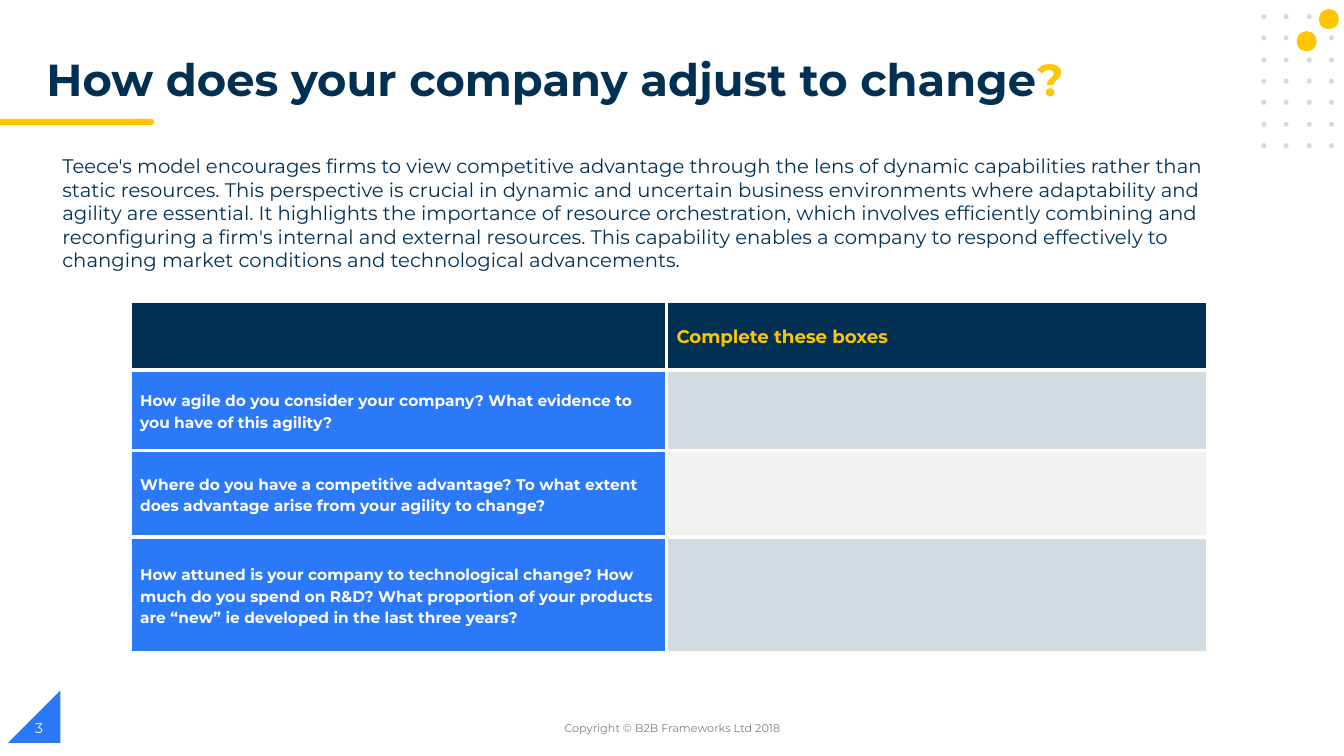
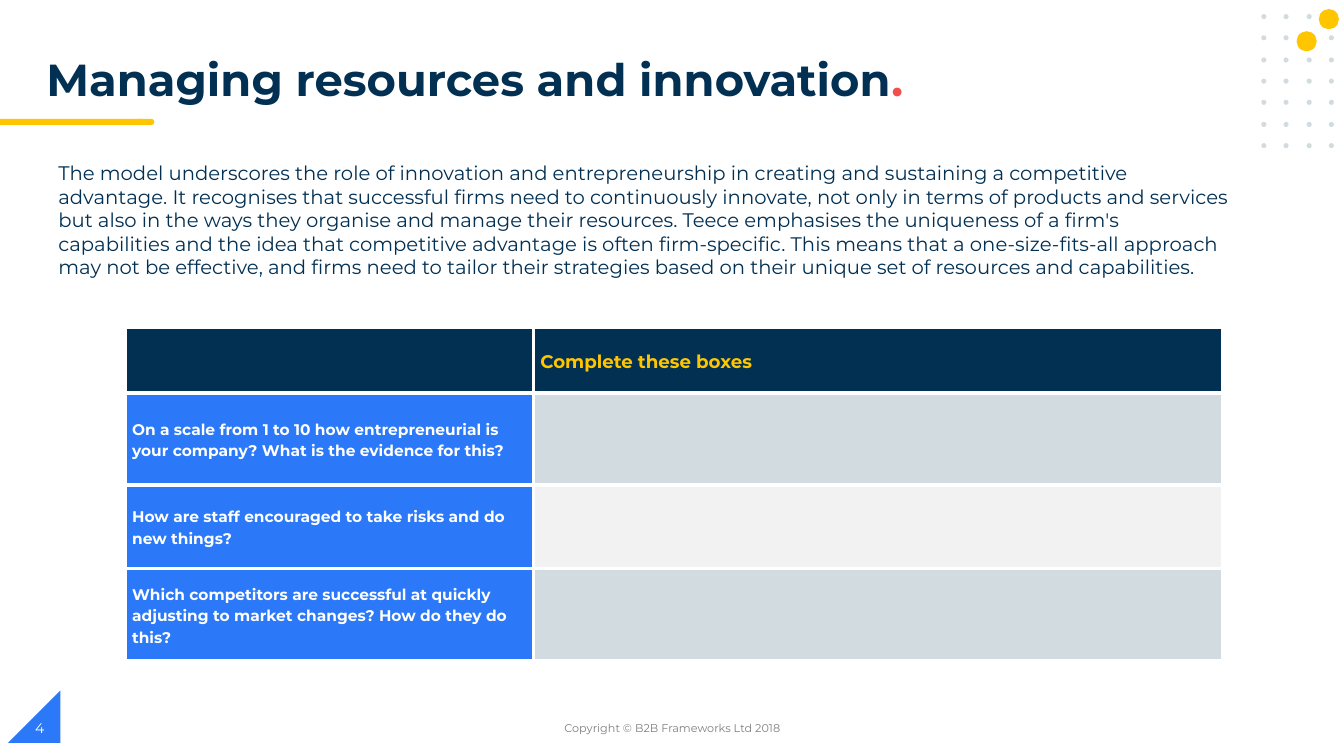
from dataclasses import dataclass

from lxml import etree
from pptx import Presentation
from pptx import util as u
from pptx.dml.color import RGBColor
from pptx.enum import shapes, text
from pptx.oxml import ns

PX = 9144  # EMU in one px, 100 px to the inch


@dataclass(frozen=True)
class Theme:
    font: str = "Montserrat"
    navy: str = "023053"
    blue: str = "2B79F8"
    yellow: str = "FFC600"
    red: str = "F24E4E"
    mist: str = "D1DBE0"
    pale: str = "F2F2F2"
    grey: str = "7F7F7F"
    white: str = "FFFFFF"
    title_size: int = 32
    body_size: int = 14
    header_size: int = 13
    question_size: int = 11
    number_size: int = 10
    copyright_size: int = 8
    border_width: int = 3


THEME = Theme()
TITLE_BOX = (36, 52, 1057, 60)
COPYRIGHT_BOX = (442, 702, 450, 40)
NUMBER_BOX = (25, 702, 300, 40)


def px(*lengths):
    return [u.Emu(length * PX) for length in lengths]


def add_run(paragraph, wording, size, color, bold=False):
    run = paragraph.add_run()
    run.text = wording
    run.font.name = THEME.font
    run.font.size = u.Pt(size)
    run.font.bold = bold
    run.font.color.rgb = RGBColor.from_string(color)


def add_text(slide, box, wording, size, color, align=text.PP_ALIGN.LEFT,
             anchor=text.MSO_ANCHOR.MIDDLE):
    frame = slide.shapes.add_textbox(*px(*box)).text_frame
    frame.word_wrap = True
    frame.vertical_anchor = anchor
    paragraph = frame.paragraphs[0]
    paragraph.alignment = align
    add_run(paragraph, wording, size, color)


def add_filled(container, kind, box, color):
    shape = container.add_shape(kind, *px(*box))
    shape.shadow.inherit = False
    shape.fill.solid()
    shape.fill.fore_color.rgb = RGBColor.from_string(color)
    shape.line.fill.background()
    return shape


def add_dot_grid(container, left, top, width, height):
    """Four columns by seven rows of small dots, with two large ones on top."""
    kind, dot = shapes.MSO_SHAPE.OVAL, 5
    grid = container.add_group_shape()
    for row in range(7):
        for column in range(4):
            x = left + round(column * (width - dot) / 3)
            y = top + round(row * (height - dot) / 6)
            add_filled(grid.shapes, kind, (x, y, dot, dot), THEME.mist)
    for x, y in ((57, -5), (35, 17)):
        add_filled(container, kind, (left + x, top + y, 20, 20), THEME.yellow)


def decorate_layout(layout, slide):
    """Draw the shared decoration on a slide, then move it to its layout."""
    for placeholder in list(layout.placeholders):
        if placeholder.placeholder_format.type != shapes.PP_PLACEHOLDER.TITLE:
            placeholder.element.getparent().remove(placeholder.element)

    present = set(shape.shape_id for shape in slide.shapes)
    kinds = shapes.MSO_SHAPE
    corner = add_filled(slide.shapes, kinds.RIGHT_TRIANGLE,
                        (8, 685, 52, 52), THEME.blue)
    corner.element.spPr.xfrm.set("flipH", "1")
    add_filled(slide.shapes, kinds.FLOWCHART_TERMINATOR,
               (134, 118, 19, 6), THEME.yellow)
    add_filled(slide.shapes, kinds.RECTANGLE, (0, 118, 141, 6), THEME.yellow)
    add_dot_grid(slide.shapes, 1251, 14, 72, 133)

    for shape in list(slide.shapes):
        if shape.shape_id not in present:
            layout.shapes.element.append(shape.element)
    for number, properties in enumerate(layout.element.xpath(".//p:cNvPr"), 1):
        properties.set("id", str(number))


def add_title(slide, wording, mark, mark_color):
    title = slide.shapes.title
    title.left, title.top, title.width, title.height = px(*TITLE_BOX)
    frame = title.text_frame
    frame.word_wrap = True
    frame.auto_size = text.MSO_AUTO_SIZE.NONE
    frame.vertical_anchor = text.MSO_ANCHOR.TOP
    paragraph = frame.paragraphs[0]
    paragraph.alignment = text.PP_ALIGN.LEFT
    paragraph.line_spacing = 0.9
    add_run(paragraph, wording, THEME.title_size, THEME.navy, True)
    add_run(paragraph, mark, THEME.title_size, mark_color, True)


def add_footer(slide, number):
    add_text(slide, COPYRIGHT_BOX, "Copyright © B2B Frameworks Ltd 2018",
             THEME.copyright_size, THEME.grey, text.PP_ALIGN.CENTER)
    add_text(slide, NUMBER_BOX, str(number), THEME.number_size, THEME.white)


def style_cell(cell, fill, inset):
    # Borders must stand before the fill in the cell properties
    properties = cell._tc.get_or_add_tcPr()
    for side in ("lnL", "lnR", "lnT", "lnB"):
        line = etree.SubElement(properties, ns.qn(f"a:{side}"),
                                w=str(u.Pt(THEME.border_width)))
        solid = etree.SubElement(line, ns.qn("a:solidFill"))
        etree.SubElement(solid, ns.qn("a:srgbClr"), val=THEME.white)
    cell.fill.solid()
    cell.fill.fore_color.rgb = RGBColor.from_string(fill)
    cell.vertical_anchor = text.MSO_ANCHOR.MIDDLE
    cell.margin_left, cell.margin_right = px(inset, inset)
    cell.margin_top = cell.margin_bottom = 0


def write_cell(cell, wording, size, color):
    paragraph = cell.text_frame.paragraphs[0]
    paragraph.line_spacing = 1.15
    add_run(paragraph, wording, size, color, True)


def add_question_table(slide, left, top, columns, rows, inset, questions):
    """A header row, then one row per question with an empty answer cell."""
    table = slide.shapes.add_table(
        len(rows), len(columns), *px(left, top, sum(columns), sum(rows))).table
    table.first_row = table.horz_banding = False
    for column, width in zip(table.columns, px(*columns)):
        column.width = width
    for row, height in zip(table.rows, px(*rows)):
        row.height = height

    for column in range(2):
        style_cell(table.cell(0, column), THEME.navy, inset)
    write_cell(table.cell(0, 1), "Complete these boxes",
               THEME.header_size, THEME.yellow)
    for row, question in enumerate(questions, 1):
        style_cell(table.cell(row, 0), THEME.blue, inset)
        style_cell(table.cell(row, 1), THEME.mist if row % 2 else THEME.pale, inset)
        write_cell(table.cell(row, 0), question, THEME.question_size, THEME.white)


def fill_question_slide(slide, number, title, intro_box, intro, table):
    add_footer(slide, number)
    add_title(slide, *title)
    add_question_table(slide, **table)
    add_text(slide, intro_box, intro, THEME.body_size, THEME.navy,
             anchor=text.MSO_ANCHOR.TOP)


SLIDES = [
    dict(
        title=("How does your company adjust to change", "?", THEME.yellow),
        intro_box=(52, 148, 1168, 128),
        intro="Teece's model encourages firms to view competitive advantage through "
              "the lens of dynamic capabilities rather than static resources. This "
              "perspective is crucial in dynamic and uncertain business environments "
              "where adaptability and agility are essential. It highlights the "
              "importance of resource orchestration, which involves efficiently "
              "combining and reconfiguring a firm's internal and external resources. "
              "This capability enables a company to respond effectively to changing "
              "market conditions and technological advancements.",
        table=dict(
            left=129, top=299, columns=(532, 537), rows=(68, 80, 86, 115), inset=10,
            questions=(
                "How agile do you consider your company? What evidence to you have "
                "of this agility?",
                "Where do you have a competitive advantage? To what extent does "
                "advantage arise from your agility to change?",
                "How attuned is your company to technological change? How much do "
                "you spend on R&D? What proportion of your products are “new” ie "
                "developed in the last three years?",
            ))),
    dict(
        title=("Managing resources and innovation", ".", THEME.red),
        intro_box=(48, 155, 1185, 128),
        intro="The model underscores the role of innovation and entrepreneurship in "
              "creating and sustaining a competitive advantage. It recognises that "
              "successful firms need to continuously innovate, not only in terms of "
              "products and services but also in the ways they organise and manage "
              "their resources. Teece emphasises the uniqueness of a firm's "
              "capabilities and the idea that competitive advantage is often "
              "firm-specific. This means that a one-size-fits-all approach may not be "
              "effective, and firms need to tailor their strategies based on their "
              "unique set of resources and capabilities.",
        table=dict(
            left=124, top=325, columns=(405, 684), rows=(65, 91, 83, 92), inset=7,
            questions=(
                "On a scale from 1 to 10 how entrepreneurial is your company? What "
                "is the evidence for this?",
                "How are staff encouraged to take risks and do new things?",
                "Which competitors are successful at quickly adjusting to market "
                "changes? How do they do this?",
            ))),
]


def main():
    presentation = Presentation()
    presentation.slide_width, presentation.slide_height = px(1333, 750)
    layout = presentation.slide_layouts.get_by_name("Title Only")
    for number, content in enumerate(SLIDES, 3):
        slide = presentation.slides.add_slide(layout)
        if len(presentation.slides) == 1:
            decorate_layout(layout, slide)
        fill_question_slide(slide, number, **content)
    presentation.save("out.pptx")


if __name__ == "__main__":
    main()
